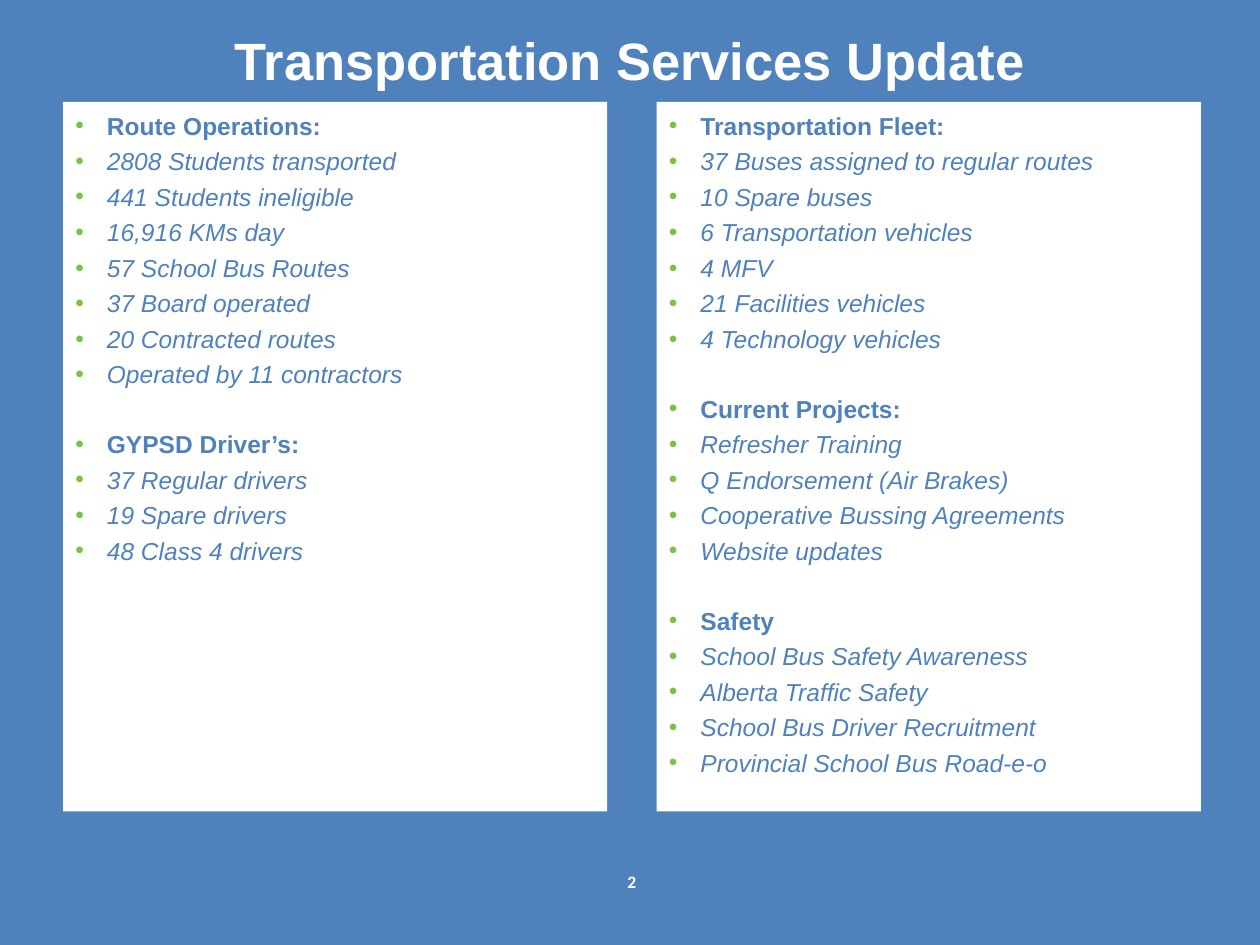
from dataclasses import dataclass

import lxml.etree
import pptx
import pptx.dml.color
import pptx.enum.shapes
import pptx.enum.text
import pptx.oxml.ns
import pptx.util

Pt = pptx.util.Pt
qn = pptx.oxml.ns.qn

COLORS = {"blue": "4F81BD", "white": "FFFFFF", "bullet": "7BC143"}
PANEL_TOP, PANEL_WIDTH, PANEL_HEIGHT = 58.3, 311, 405.4
INDENT = 18
ITEM_GAP, SECTION_GAP = 3.5, 23.1


@dataclass
class Section:
    heading: str
    items: list[str]


@dataclass
class Panel:
    left: float
    sections: list[Section]


PANELS = [
    Panel(36, [
        Section("Route Operations:", [
            "2808 Students transported",
            "441 Students ineligible",
            "16,916 KMs day",
            "57 School Bus Routes",
            "37 Board operated",
            "20 Contracted routes",
            "Operated by 11 contractors",
        ]),
        Section("GYPSD Driver’s:", [
            "37 Regular drivers",
            "19 Spare drivers",
            "48 Class 4 drivers",
        ]),
    ]),
    Panel(375.2, [
        Section("Transportation Fleet:", [
            "37 Buses assigned to regular routes",
            "10 Spare buses",
            "6 Transportation vehicles",
            "4 MFV",
            "21 Facilities vehicles",
            "4 Technology vehicles",
        ]),
        Section("Current Projects:", [
            "Refresher Training",
            "Q Endorsement (Air Brakes)",
            "Cooperative Bussing Agreements",
            "Website updates",
        ]),
        Section("Safety", [
            "School Bus Safety Awareness",
            "Alberta Traffic Safety",
            "School Bus Driver Recruitment",
            "Provincial School Bus Road-e-o",
        ]),
    ]),
]


def rgb(name: str) -> pptx.dml.color.RGBColor:
    return pptx.dml.color.RGBColor.from_string(COLORS[name])


def format_runs(paragraph, size: float, color: str, font: str = "Arial",
                bold: bool = True, italic: bool = False) -> None:
    for run in paragraph.runs:
        run.font.name = font
        run.font.size = Pt(size)
        run.font.bold = bold
        run.font.italic = italic
        run.font.color.rgb = rgb(color)


def add_bullet(paragraph) -> None:
    properties = paragraph._p.get_or_add_pPr()
    properties.set("marL", str(Pt(INDENT)))
    properties.set("indent", str(-Pt(INDENT)))
    bullet_color = lxml.etree.SubElement(properties, qn("a:buClr"))
    lxml.etree.SubElement(bullet_color, qn("a:srgbClr"), val=COLORS["bullet"])
    lxml.etree.SubElement(properties, qn("a:buFont"), typeface="Arial")
    lxml.etree.SubElement(properties, qn("a:buChar"), char="•")


def add_panel(slide, panel: Panel) -> None:
    box = slide.shapes.add_shape(
        pptx.enum.shapes.MSO_SHAPE.RECTANGLE, Pt(panel.left), Pt(PANEL_TOP),
        Pt(PANEL_WIDTH), Pt(PANEL_HEIGHT))
    box.shadow.inherit = False
    box.fill.solid()
    box.fill.fore_color.rgb = rgb("white")
    box.line.fill.background()
    frame = box.text_frame
    frame.word_wrap = True
    frame.vertical_anchor = pptx.enum.text.MSO_ANCHOR.TOP
    frame.margin_top = Pt(5)
    entries = [(text, position == 0) for section in panel.sections
               for position, text in enumerate([section.heading, *section.items])]
    frame.text = "\n".join(text for text, _ in entries)
    for number, (paragraph, (_, is_heading)) in enumerate(zip(frame.paragraphs, entries)):
        add_bullet(paragraph)
        paragraph.alignment = pptx.enum.text.PP_ALIGN.LEFT
        if number:
            paragraph.space_before = Pt(SECTION_GAP if is_heading else ITEM_GAP)
        format_runs(paragraph, 14, "blue", bold=is_heading, italic=not is_heading)


def set_title(slide, text: str) -> None:
    title = slide.shapes.title
    title.left, title.top, title.width, title.height = Pt(36), Pt(9.4), Pt(648), Pt(49)
    title.text_frame.text = text
    title.text_frame.vertical_anchor = pptx.enum.text.MSO_ANCHOR.MIDDLE
    heading = title.text_frame.paragraphs[0]
    heading.alignment = pptx.enum.text.PP_ALIGN.CENTER
    format_runs(heading, 30, "white")


def add_page_number(slide, number: int) -> None:
    box = slide.shapes.add_textbox(Pt(347), Pt(493.9), Pt(28), Pt(19.4))
    box.text_frame.word_wrap = True
    box.text_frame.text = str(number)
    paragraph = box.text_frame.paragraphs[0]
    paragraph.alignment = pptx.enum.text.PP_ALIGN.CENTER
    format_runs(paragraph, 10, "white", font="Calibri")


def main() -> None:
    presentation = pptx.Presentation()
    presentation.slide_width, presentation.slide_height = Pt(720), Pt(540)
    slide = presentation.slides.add_slide(
        presentation.slide_layouts.get_by_name("Title Only"))
    slide.background.fill.solid()
    slide.background.fill.fore_color.rgb = rgb("blue")
    set_title(slide, "Transportation Services Update")
    for panel in PANELS:
        add_panel(slide, panel)
    add_page_number(slide, 2)
    presentation.save("out.pptx")


if __name__ == "__main__":
    main()
